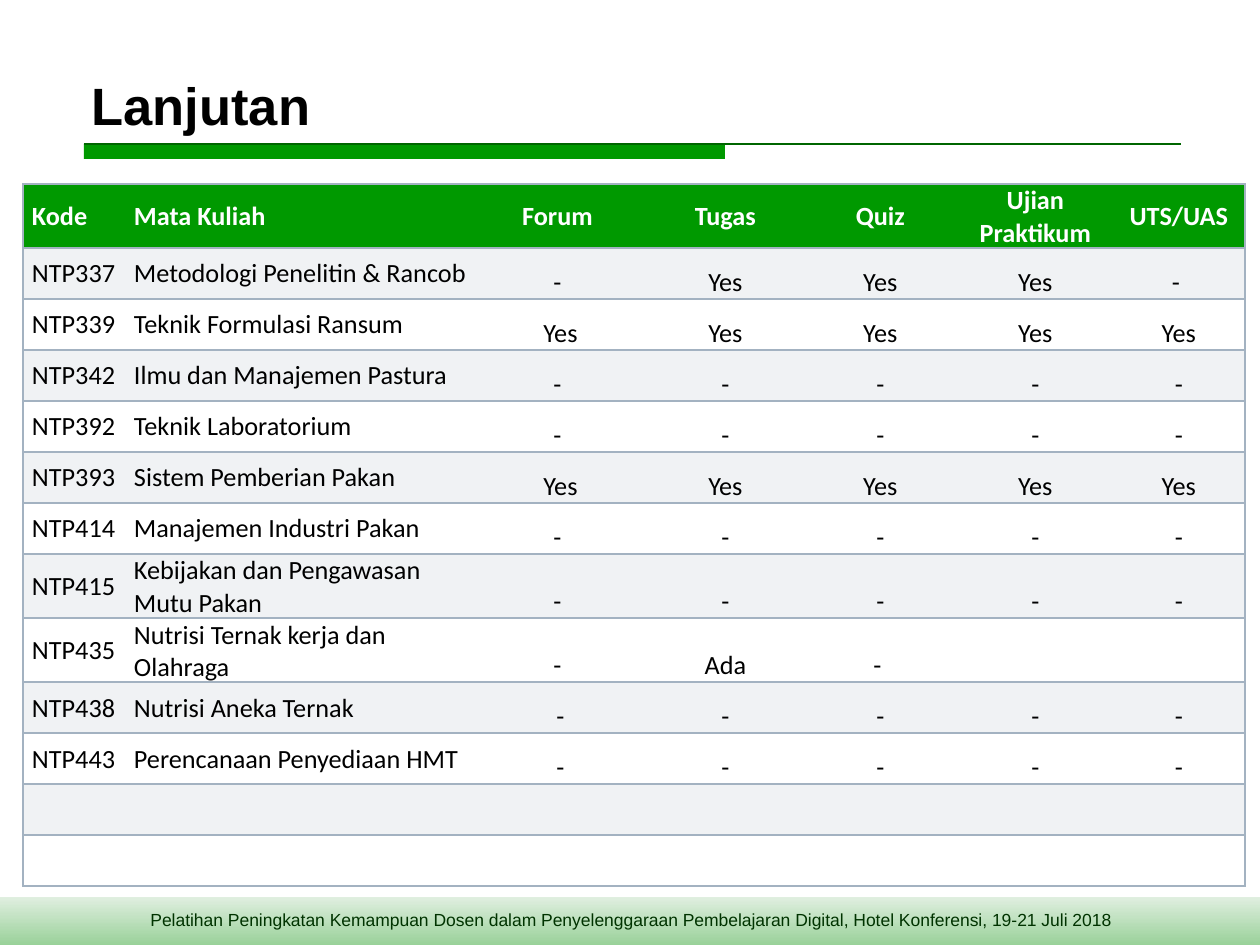
from pptx import Presentation
from pptx import util as u
from pptx.dml.color import RGBColor
from pptx.enum import shapes, text
from pptx.oxml import parse_xml
from pptx.oxml.ns import nsdecls, qn

SCALE = u.Inches(1) / 126
NO_STYLE = "{2D5ABB26-0587-4C30-8999-92F81FD0307C}"
BORDER = "A3B2C1"
COLUMNS = [110, 340, 175, 155, 155, 155, 132]
ROW_HEIGHT = 51
LAST_COLUMN = len(COLUMNS) - 1
SPACED = "- "
ALL_YES = ["Yes"] * 5
ALL_DASH = ["-"] * 5
SPACED_DASH = [SPACED] + ["-"] * 4
ROWS = [
    ["Kode", "Mata Kuliah", "Forum ", "Tugas", "Quiz", "Ujian Praktikum", "UTS/UAS"],
    ["NTP337", "Metodologi Penelitin & Rancob", SPACED, "Yes", "Yes", "Yes", SPACED],
    ["NTP339", "Teknik Formulasi Ransum", *ALL_YES],
    ["NTP342", "Ilmu dan Manajemen Pastura", *SPACED_DASH],
    ["NTP392", "Teknik Laboratorium", *SPACED_DASH],
    ["NTP393", "Sistem Pemberian Pakan", *ALL_YES],
    ["NTP414", "Manajemen Industri Pakan", *SPACED_DASH],
    ["NTP415", "Kebijakan dan Pengawasan Mutu Pakan", *SPACED_DASH],
    ["NTP435", "Nutrisi Ternak kerja dan Olahraga", SPACED, "Ada", SPACED, "", ""],
    ["NTP438", "Nutrisi Aneka Ternak", *ALL_DASH],
    ["NTP443", "Perencanaan Penyediaan HMT", *ALL_DASH],
    [""] * 7,
    [""] * 7,
]


def px(length):
    return u.Emu(round(length * SCALE))


def color(value):
    return RGBColor.from_string(value)


def apply(target, values):
    for name, value in values.items():
        setattr(target, name, value)


def place(shape, left, top, width, height):
    apply(shape, {"left": px(left), "top": px(top),
                  "width": px(width), "height": px(height)})


def write(para, words, align, ink, **font):
    para.alignment = align
    span = para.add_run()
    span.text = words
    apply(span.font, font)
    span.font.color.rgb = color(ink)


def add_title(page, words):
    title = page.shapes.title
    place(title, 79, 42, 1103, 100)
    apply(title.text_frame, {"vertical_anchor": text.MSO_ANCHOR.BOTTOM,
                             "word_wrap": True,
                             "auto_size": text.MSO_AUTO_SIZE.NONE})
    write(title.text_frame.paragraphs[0], words, text.PP_ALIGN.LEFT, "000000",
          name="Arial", size=u.Pt(30), bold=True)


def add_bar(page, left, top, width, height):
    bar = page.shapes.add_shape(shapes.MSO_SHAPE.RECTANGLE,
                                px(left), px(top), px(width), px(height))
    bar.shadow.inherit = False
    bar.line.fill.background()
    return bar


def add_rule(page, left, right, top):
    rule = page.shapes.add_connector(shapes.MSO_CONNECTOR.STRAIGHT,
                                     px(left), px(top), px(right), px(top))
    rule.line.color.rgb = color("006600")
    rule.line.width = u.Pt(0.75)
    rule.element.spPr.append(parse_xml(f"<a:effectLst {nsdecls('a')}/>"))


def add_title_underline(page):
    bar = add_bar(page, 84, 144, 641, 15)
    bar.fill.solid()
    bar.fill.fore_color.rgb = color("009900")
    add_rule(page, 84, 1181, 144)


def add_footer(page, words):
    band = add_bar(page, 0, 897, 1262, 51)
    band.fill.gradient()
    band.fill.gradient_angle = 90
    for stop, value in zip(band.fill.gradient_stops, ("95CF95", "E0EFE0")):
        stop.color.rgb = color(value)
    box = page.shapes.add_textbox(px(23), px(903), px(1215), px(34))
    box.text_frame.word_wrap = True
    write(box.text_frame.paragraphs[0], words, text.PP_ALIGN.CENTER, "003300",
          name="Arial", size=u.Pt(10))


def set_borders(cell, sides):
    properties = cell._tc.get_or_add_tcPr()
    for index, side in enumerate(sides):
        properties.insert(index, parse_xml(
            f'<a:ln{side} {nsdecls("a")} w="{u.Pt(1)}"><a:solidFill>'
            f'<a:srgbClr val="{BORDER}"/></a:solidFill></a:ln{side}>'))


def row_fill(row):
    if row == 0:
        return "009900"
    return "F0F2F4" if row % 2 else "FFFFFF"


def format_cell(cell, row, column, words):
    is_mark = column > 1
    low = is_mark and row > 0
    apply(cell, {"margin_left": px(1), "margin_right": px(1),
                 "margin_top": px(1), "margin_bottom": 0,
                 "vertical_anchor": text.MSO_ANCHOR.BOTTOM if low else text.MSO_ANCHOR.MIDDLE})
    cell.fill.solid()
    cell.fill.fore_color.rgb = color(row_fill(row))
    sides = {0: "LTB", LAST_COLUMN: "RTB"}.get(column, "TB")
    set_borders(cell, sides)
    para = cell.text_frame.paragraphs[0]
    if column == 0:
        para._p.get_or_add_pPr().set("indent", str(px(8)))
    if words:
        write(para, words, text.PP_ALIGN.CENTER if is_mark else text.PP_ALIGN.LEFT,
              "000000" if row else "FFFFFF",
              name="Calibri", size=u.Pt(15), bold=row == 0)


def add_course_table(page):
    frame = page.shapes.add_table(len(ROWS), len(COLUMNS), px(23), px(184),
                                  px(sum(COLUMNS)), px(ROW_HEIGHT * len(ROWS)))
    for style in frame.element.iter(qn("a:tableStyleId")):
        style.text = NO_STYLE
    table = frame.table
    for column, width in zip(table.columns, COLUMNS):
        column.width = px(width)
    for row, values in enumerate(ROWS):
        table.rows[row].height = px(ROW_HEIGHT)
        for column, words in enumerate(values):
            format_cell(table.cell(row, column), row, column, words)


def main():
    deck = Presentation()
    deck.slide_width, deck.slide_height = px(1260), px(945)
    page = deck.slides.add_slide(deck.slide_layouts[5])
    add_title_underline(page)
    add_footer(page, "Pelatihan Peningkatan Kemampuan Dosen dalam Penyelenggaraan "
                     "Pembelajaran Digital, Hotel Konferensi, 19-21 Juli 2018")
    add_title(page, "Lanjutan")
    add_course_table(page)
    deck.save("out.pptx")


if __name__ == "__main__":
    main()
